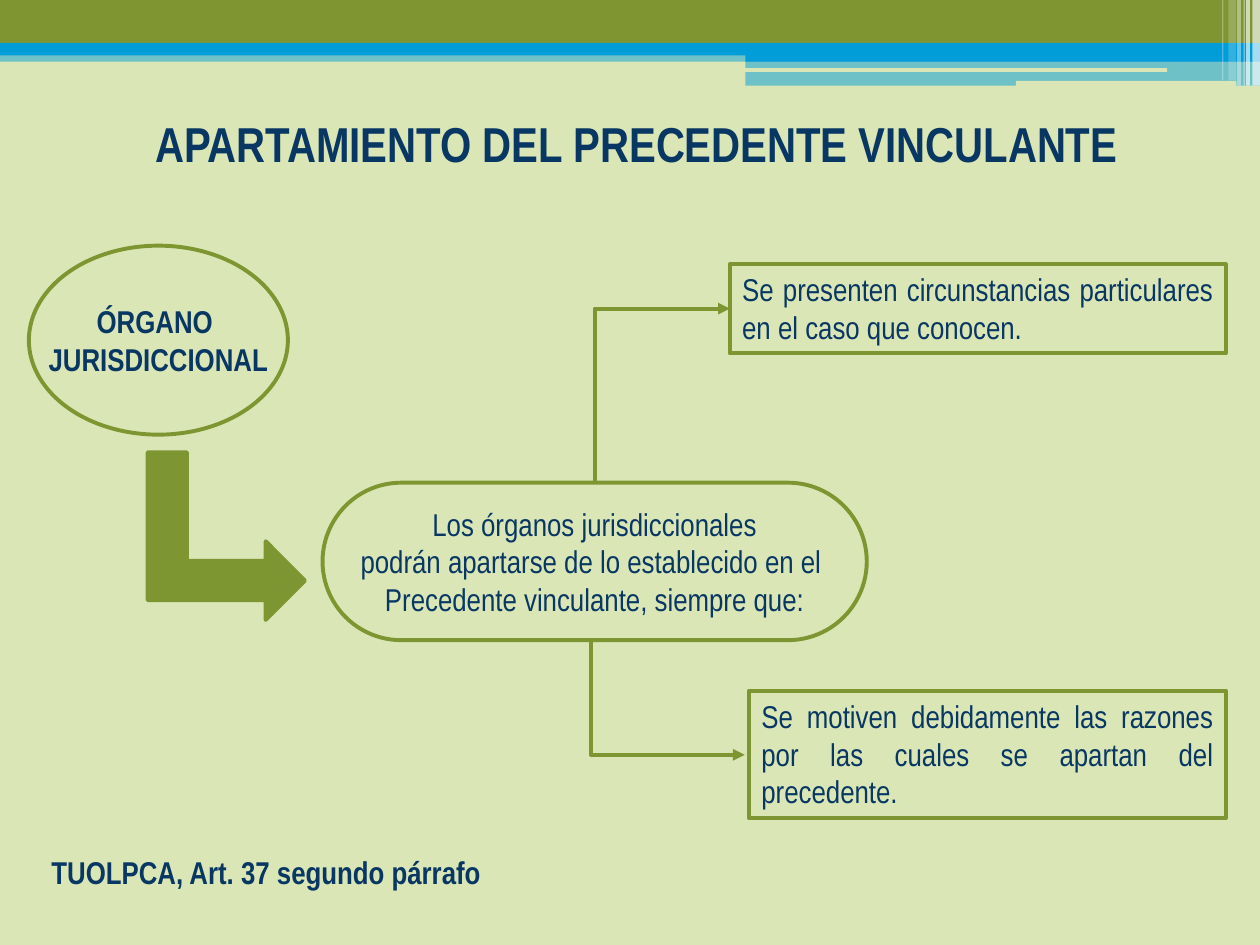
from dataclasses import dataclass

from lxml import etree
from pptx import Presentation
from pptx.dml.color import RGBColor
from pptx.enum.shapes import MSO_CONNECTOR, MSO_SHAPE
from pptx.enum.text import MSO_ANCHOR, PP_ALIGN
from pptx.oxml.ns import qn
from pptx.util import Pt

RECTANGLE = MSO_SHAPE.RECTANGLE
ROUNDED = MSO_SHAPE.ROUNDED_RECTANGLE
OVAL = MSO_SHAPE.OVAL
BENT_ARROW = MSO_SHAPE.BENT_UP_ARROW
ELBOW = MSO_CONNECTOR.ELBOW
TOP, MIDDLE = MSO_ANCHOR.TOP, MSO_ANCHOR.MIDDLE
LEFT, CENTER, JUSTIFY = PP_ALIGN.LEFT, PP_ALIGN.CENTER, PP_ALIGN.JUSTIFY


@dataclass(frozen=True)
class Theme:
    font: str = "Arial Narrow"
    title_size: float = 28
    body_size: float = 18
    line_width: float = 2.25
    background: str = "DBE6B6"
    band_green: str = "7E9532"
    green: str = "7E9632"
    blue: str = "009DD9"
    white: str = "FFFFFF"
    text: str = "083763"


class SlideBuilder:
    def __init__(self, slide, theme):
        self.slide = slide
        self.theme = theme
        self.set_fill(slide.background.fill, theme.background)

    def set_fill(self, fill, color, opacity=100):
        fill.solid()
        fill.fore_color.rgb = RGBColor.from_string(color)
        if opacity < 100:
            color_element = fill._xPr.find(qn("a:solidFill"))[0]
            etree.SubElement(color_element, qn("a:alpha"), val=str(opacity * 1000))

    def set_line(self, line):
        line.color.rgb = RGBColor.from_string(self.theme.green)
        line.width = Pt(self.theme.line_width)

    def shape(self, kind, box, adjustment=None):
        shape = self.slide.shapes.add_shape(kind, *map(Pt, box))
        shape.shadow.inherit = False
        if adjustment is not None:
            shape.adjustments[0] = adjustment
        return shape

    def band(self, box, color, opacity=100, kind=RECTANGLE):
        shape = self.shape(kind, box)
        self.set_fill(shape.fill, color, opacity)
        shape.line.fill.background()

    def add_text(self, shape, lines, align, anchor=TOP, size=None, bold=False, wrap=True):
        frame = shape.text_frame
        frame.word_wrap = wrap
        frame.vertical_anchor = anchor
        for index, line in enumerate(lines):
            paragraph = frame.paragraphs[0] if index == 0 else frame.add_paragraph()
            paragraph.alignment = align
            run = paragraph.add_run()
            run.text = line
            run.font.name = self.theme.font
            run.font.size = Pt(size or self.theme.body_size)
            run.font.bold = bold
            run.font.color.rgb = RGBColor.from_string(self.theme.text)

    def outlined(self, kind, box, lines, adjustment=None, **text_style):
        shape = self.shape(kind, box, adjustment)
        shape.fill.background()
        self.set_line(shape.line)
        self.add_text(shape, lines, **text_style)

    def label(self, box, text, **text_style):
        self.add_text(self.slide.shapes.add_textbox(*map(Pt, box)), [text], **text_style)

    def block_arrow(self, box, rotation):
        shape = self.shape(BENT_ARROW, box)
        shape.rotation = rotation
        self.set_fill(shape.fill, self.theme.green)
        self.set_line(shape.line)

    def elbow(self, start, end):
        """Draw an arrow that runs vertically from start, then right to end."""
        (x1, y1), (x2, y2) = start, end
        upward = y2 < y1
        width, height = abs(y2 - y1), x2 - x1
        left, top = (x1 + x2 - width) / 2, (y1 + y2 - height) / 2
        begin_y, end_y = (top + height, top) if upward else (top, top + height)
        connector = self.slide.shapes.add_connector(
            ELBOW, Pt(left + width), Pt(begin_y), Pt(left), Pt(end_y))
        self.set_line(connector.line)
        properties = connector._element.spPr
        properties.find(qn("a:xfrm")).set("rot", str((90 if upward else 270) * 60000))
        properties.find(qn("a:prstGeom")).set("prst", "bentConnector2")
        etree.SubElement(properties.find(qn("a:ln")), qn("a:tailEnd"), type="triangle")
        etree.SubElement(properties, qn("a:effectLst"))


def draw_header(builder):
    theme = builder.theme
    builder.band((0, 28.8, 720, 6.5), theme.blue, 50)
    builder.band((0, 0, 720, 24.5), theme.band_green)
    builder.band((0, 24.5, 720, 7.2), theme.blue)
    builder.band((426, 28.1, 294, 7.2), theme.blue)
    builder.band((426, 35, 294, 14), theme.blue, 50)
    builder.band((425.5, 39, 241.5, 2.16), theme.background, kind=ROUNDED)
    builder.band((580.5, 46.3, 126, 2.88), theme.background, kind=ROUNDED)
    stripes = [
        (715.7, 4.3, 49, 65), (712.1, 2.16, 49, 65), (710.6, 0.72, 49, 60),
        (707, 2.16, 49, 40), (702, 4.3, 46, 20), (698.4, 0.72, 46, 30),
    ]
    for left, width, height, opacity in stripes:
        builder.band((left, 0, width, height), theme.white, opacity)


def draw_diagram(builder):
    centered = {"align": CENTER, "anchor": MIDDLE, "wrap": False}
    builder.outlined(OVAL, (16.5, 140.4, 148, 108),
                     ["ÓRGANO ", "JURISDICCIONAL"], bold=True, **centered)
    builder.outlined(RECTANGLE, (417, 151, 283.5, 51),
                     ["Se presenten circunstancias particulares en el caso que conocen."],
                     align=JUSTIFY)
    builder.outlined(RECTANGLE, (428, 394.6, 272.5, 73),
                     ["Se motiven debidamente las razones por las cuales se apartan "
                      "del precedente."], align=JUSTIFY)
    builder.outlined(ROUNDED, (184.3, 275.8, 311, 90),
                     ["Los órganos jurisdiccionales",
                      "podrán apartarse de lo establecido en el ",
                      "Precedente vinculante, siempre que:"],
                     adjustment=0.5, **centered)
    builder.elbow((339.8, 275.8), (417, 176.4))
    builder.elbow((337.7, 365.8), (425.5, 431.3))
    builder.block_arrow((81.4, 261.4, 95.8, 90), 90)


def main():
    presentation = Presentation()
    presentation.slide_width, presentation.slide_height = Pt(720), Pt(540)
    slide = presentation.slides.add_slide(presentation.slide_layouts[6])
    theme = Theme()
    builder = SlideBuilder(slide, theme)
    draw_header(builder)
    builder.label((39.6, 56.2, 648, 50.4), "APARTAMIENTO DEL PRECEDENTE VINCULANTE",
                  align=CENTER, anchor=MIDDLE, size=theme.title_size, bold=True)
    draw_diagram(builder)
    builder.label((22.3, 483.8, 281.5, 28.8), "TUOLPCA, Art. 37 segundo párrafo",
                  align=LEFT, bold=True)
    presentation.save("out.pptx")


if __name__ == "__main__":
    main()
